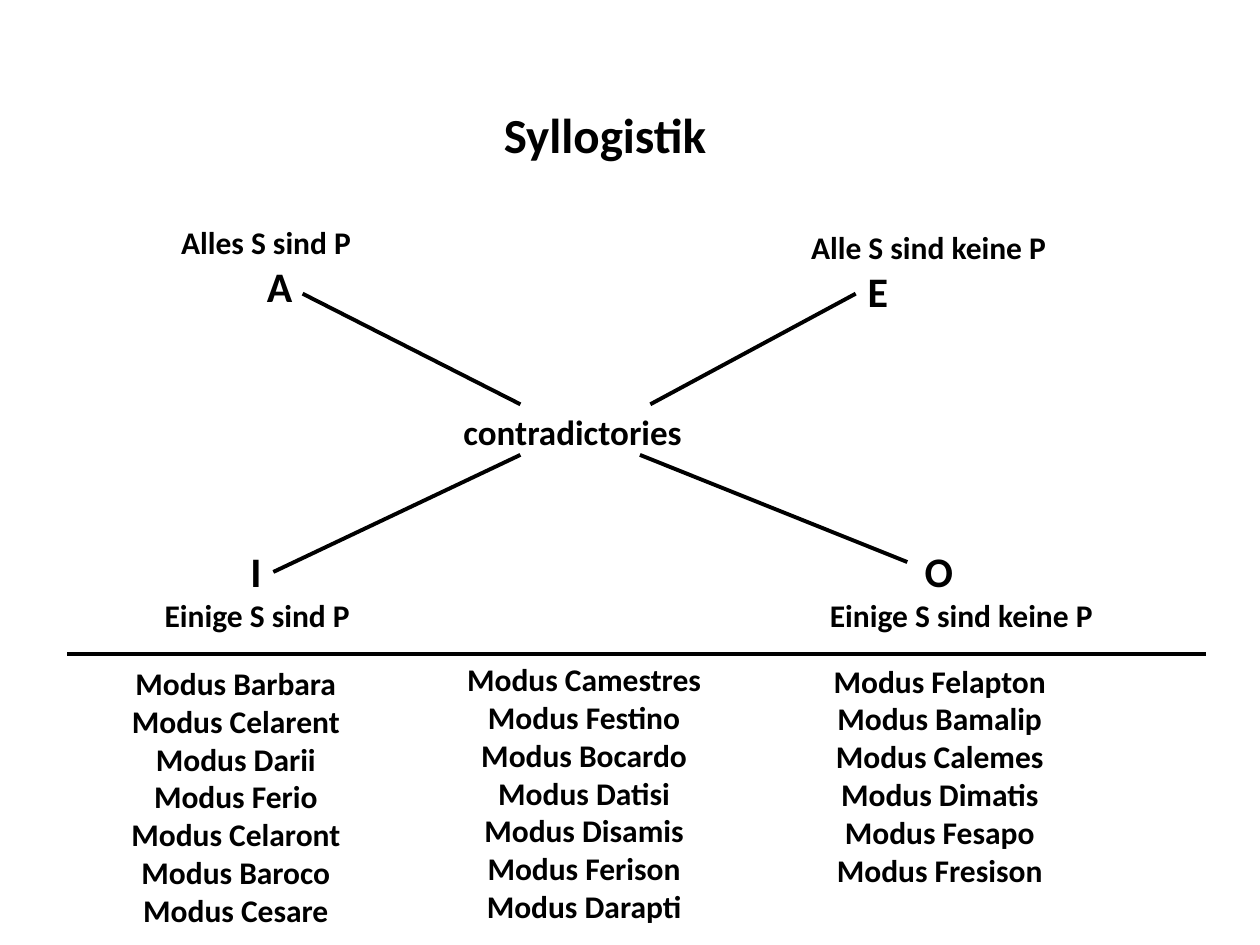
from dataclasses import dataclass

import lxml.etree
import pptx
import pptx.dml.color
import pptx.enum.shapes
import pptx.enum.text
import pptx.oxml.ns
import pptx.util

Cm = pptx.util.Cm
Pt = pptx.util.Pt
Align = pptx.enum.text.PP_ALIGN


@dataclass(frozen=True)
class Theme:
    font: str = "Calibri"
    ink: pptx.dml.color.RGBColor = pptx.dml.color.RGBColor(0, 0, 0)
    title: int = 28
    letter: int = 24
    centre: int = 20
    text: int = 18
    rule: float = 2.25


@dataclass(frozen=True)
class Box:
    left: float
    top: float
    width: float
    height: float


@dataclass(frozen=True)
class Line:
    text: str
    size: int
    indent: float = 0


@dataclass(frozen=True)
class Block:
    box: Box
    lines: list[Line]


@dataclass(frozen=True)
class Stroke:
    x1: float
    y1: float
    x2: float
    y2: float


THEME = Theme()

TITLE = Block(Box(4.5, 1.98, 15.39, 1.45), [Line("Syllogistik", THEME.title)])


def modes(left: float, top: float, width: float, names: str) -> Block:
    lines = [Line(f"Modus {name}", THEME.text) for name in names.split()]
    return Block(Box(left, top, width, 5.7), lines)


LISTS = [
    modes(1.35, 13.26, 6.81, "Barbara Celarent Darii Ferio Celaront Baroco Cesare"),
    modes(8.08, 13.18, 7.39, "Camestres Festino Bocardo Datisi Disamis Ferison Darapti"),
    modes(15.54, 13.21, 6.81, "Felapton Bamalip Calemes Dimatis Fesapo Fresison"),
]

LABELS = [
    Block(Box(9.09, 8.15, 5.11, 1.12), [Line("contradictories", THEME.centre)]),
    Block(Box(3.4, 4.37, 5.11, 2.06),
          [Line("Alles S sind P", THEME.text), Line("A", THEME.letter, 1.73)]),
    Block(Box(16.1, 4.47, 5.79, 2.06),
          [Line("Alle S sind keine P", THEME.text), Line("E", THEME.letter, 1.14)]),
    Block(Box(16.48, 10.87, 5.87, 2.06),
          [Line("O", THEME.letter, 1.91), Line("Einige S sind keine P", THEME.text)]),
    Block(Box(3.07, 10.87, 5.11, 2.06),
          [Line("I", THEME.letter, 1.73), Line("Einige S sind P", THEME.text)]),
]

STROKES = [
    Stroke(6.1, 5.92, 10.49, 8.15),
    Stroke(17.25, 5.92, 13.11, 8.15),
    Stroke(10.49, 9.17, 5.51, 11.53),
    Stroke(12.9, 9.17, 18.29, 11.33),
    Stroke(24.31, 13.18, 1.35, 13.18),
]


def write(shape, block: Block, align: Align) -> None:
    box = block.box
    shape.left, shape.top = Cm(box.left), Cm(box.top)
    shape.width, shape.height = Cm(box.width), Cm(box.height)
    frame = shape.text_frame
    frame.text = "\n".join(line.text for line in block.lines)
    frame.word_wrap = True
    frame.auto_size = pptx.enum.text.MSO_AUTO_SIZE.NONE
    frame.vertical_anchor = pptx.enum.text.MSO_ANCHOR.TOP
    for para, line in zip(frame.paragraphs, block.lines):
        props = para._p.get_or_add_pPr()
        props.set("marL", str(Cm(line.indent)))
        props.set("indent", "0")
        lxml.etree.SubElement(props, pptx.oxml.ns.qn("a:buNone"))
        para.alignment = align
        para.space_before = Pt(0)
        for run in para.runs:
            font = run.font
            font.name, font.size, font.bold = THEME.font, Pt(line.size), True
            font.color.rgb = THEME.ink


def draw(slide, stroke: Stroke) -> None:
    line = slide.shapes.add_connector(
        pptx.enum.shapes.MSO_CONNECTOR.STRAIGHT,
        Cm(stroke.x1), Cm(stroke.y1), Cm(stroke.x2), Cm(stroke.y2))
    line.line.color.rgb = THEME.ink
    line.line.width = Pt(THEME.rule)
    lxml.etree.SubElement(line._element.spPr, pptx.oxml.ns.qn("a:effectLst"))


def main() -> None:
    deck = pptx.Presentation()
    deck.slide_width, deck.slide_height = Cm(25.4), Cm(19.05)
    slide = deck.slides.add_slide(deck.slide_layouts.get_by_name("Comparison"))
    title, *bodies = slide.placeholders
    write(title, TITLE, Align.CENTER)
    for body, block in zip(bodies, LISTS):
        write(body, block, Align.CENTER)
    for spare in bodies[len(LISTS):]:
        spare._element.getparent().remove(spare._element)
    for stroke in STROKES:
        draw(slide, stroke)
    for block in LABELS:
        write(slide.shapes.add_textbox(0, 0, 0, 0), block, Align.LEFT)
    deck.save("out.pptx")


if __name__ == "__main__":
    main()
